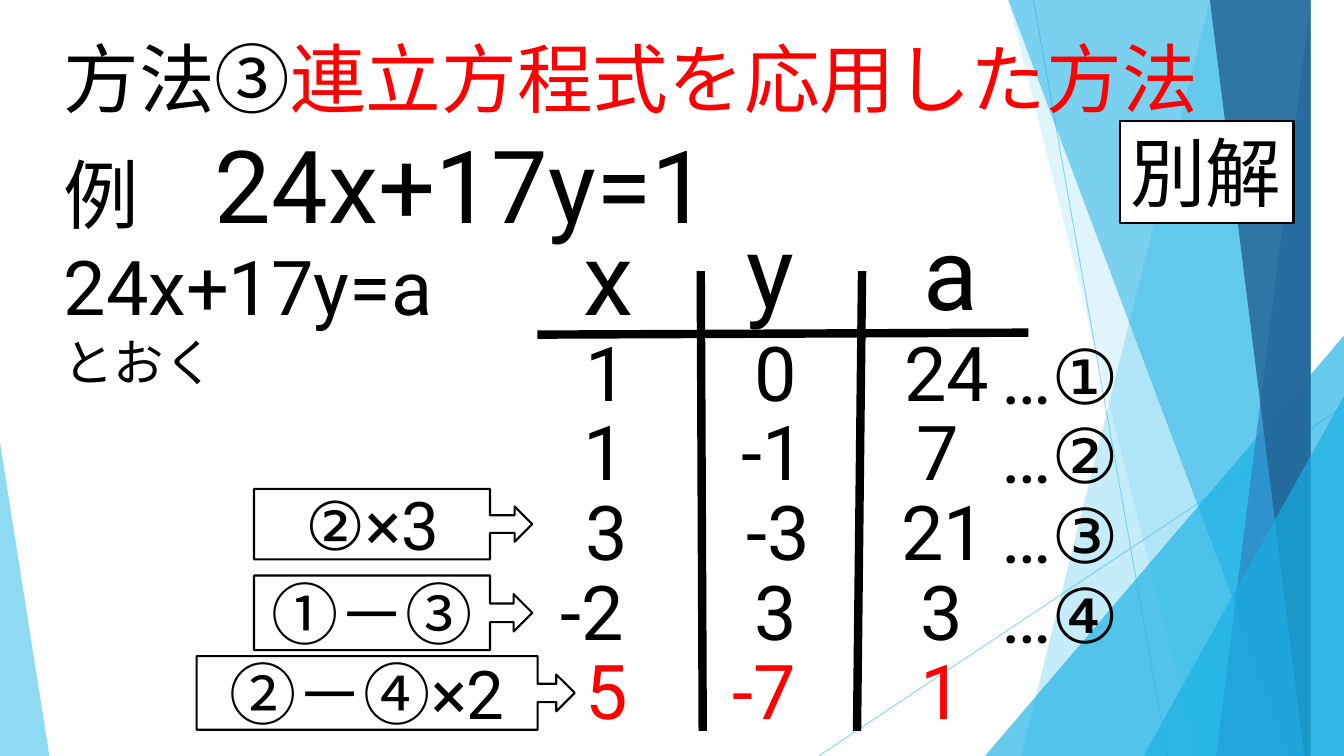
"""Build the slide that solves 24x+17y=1 with a table of equations."""
from pptx import Presentation
from pptx.dml.color import RGBColor
from pptx.enum.shapes import MSO_CONNECTOR, MSO_SHAPE
from pptx.enum.text import MSO_ANCHOR, MSO_AUTO_SIZE, PP_ALIGN
from pptx.oxml.ns import qn
from pptx.util import Inches, Pt
from lxml.etree import SubElement

THEME = {
    "font": "Roboto", "ink": "000000", "red": "FF0000", "paper": "FFFFFF",
    "sky": "5FCBEF", "cyan": "17B0E4", "blue": "2E83C3", "navy": "226292",
    "huge": 72, "big": 54, "mid": 48, "small": 36,
}

TITLE = [
    [("方法③", "big", "ink"), ("連立方程式を応用した方法", "big", "red")],
    [("例\u3000".replace("\u3000", "　"), "big", "ink"), ("24x+17y=1", "huge", "ink")],
]
BODY = [[("24x+17y=a", "big", "ink")], [("とおく", "small", "ink")]]
HEADS = [("x", 5.69, 2.08), ("y", 7.31, 2.01), ("a", 9.06, 2.03)]
ROWS = [
    ([("1", 5.71), ("0", 7.38), ("24", 8.87)], "①", "ink"),
    ([("1", 5.69), ("-1", 7.26), ("7", 8.99)], "②", "ink"),
    ([("3", 5.71), ("-3", 7.31), ("21", 8.84)], "③", "ink"),
    ([("-2", 5.46), ("3", 7.38), ("3", 9.03)], "④", "ink"),
    ([("5", 5.71), ("-7", 7.17), ("1", 9.03)], "", "red"),
]
WIDTHS = (0.89, 0.89, 1.3)
STEPS = [
    ("②×3", (2.52, 4.85, 2.76, 0.7), 0.848),
    ("①－③", (2.52, 5.71, 2.76, 0.74), 0.848),
    ("②－④×2", (1.95, 6.51, 3.75, 0.73), 0.902),
]
RULES = [(5.33, 3.32, 10.2, 3.3), (6.95, 2.69, 6.97, 7.25), (8.55, 2.69, 8.5, 7.25)]
RAYS = [(10.25, 0, 11.58, 7.5), (13.33, 4.03, 8.12, 7.5)]
BANDS = [
    (12.28, 10.04, "sky", 36),
    (10.5, 11.83, "sky", 20),
    ((9.77, 3.33, 3.56, 4.17), 1, "cyan", 66),
    (10.21, 12.91, "cyan", 50),
    (13.03, 11.92, "blue", 70),
    (11.96, 13.18, "navy", 80),
    ((11.34, 3.93, 1.99, 3.57), 1, "cyan", 66),
    ((0, 4.39, 0.49, 3.11), 0, "sky", 70),
]


def tint(name):
    return RGBColor.from_string(THEME[name])


def fade(fill, share):
    node = fill._xPr.find(".//" + qn("a:srgbClr"))
    SubElement(node, qn("a:alpha"), val=str(share * 1000))


def place(shape, box):
    for key, val in zip(("left", "top", "width", "height"), box):
        setattr(shape, key, Inches(val))


def write(shape, lines, **form):
    frame = shape.text_frame
    style = {"word_wrap": True, "auto_size": MSO_AUTO_SIZE.NONE,
             "vertical_anchor": MSO_ANCHOR.TOP}
    align = form.pop("align", PP_ALIGN.LEFT)
    for key, val in {**style, **form}.items():
        setattr(frame, key, val)
    for i, line in enumerate(lines):
        para = frame.add_paragraph() if i else frame.paragraphs[0]
        for key, val in {"alignment": align, "space_before": Pt(0)}.items():
            setattr(para, key, val)
        for text, size, color in line:
            run = para.add_run()
            run.text = text
            run.font.color.rgb = tint(color)
            for key, val in {"name": THEME["font"], "size": Pt(THEME[size])}.items():
                setattr(run.font, key, val)


def label(slide, text, box, size="big", color="ink"):
    write(slide.shapes.add_textbox(*map(Inches, box)), [[(text, size, color)]])


def stroke(slide, ends, color, width, share=100):
    line = slide.shapes.add_connector(MSO_CONNECTOR.STRAIGHT, *map(Inches, ends))
    line.line.color.rgb = tint(color)
    line.line.width = Pt(width)
    if share < 100:
        fade(line.line.fill, share)
    SubElement(line._element.spPr, qn("a:effectLst"))


def panel(slide, kind, box):
    shape = slide.shapes.add_shape(kind, *map(Inches, box))
    shape.shadow.inherit = False
    shape.fill.solid()
    shape.fill.fore_color.rgb = tint("paper")
    shape.line.color.rgb = tint("ink")
    shape.line.width = Pt(1.5)
    return shape


def backdrop(slide):
    for ends in RAYS:
        stroke(slide, ends, "sky", 0.75, 70)
    for head, foot, color, share in BANDS:
        if isinstance(head, tuple):
            shape = panel(slide, MSO_SHAPE.ISOSCELES_TRIANGLE, head)
            shape.adjustments[0] = foot
        else:
            pen = slide.shapes.build_freeform(head, -0.01, scale=Inches(1))
            pen.add_line_segments([(13.33, -0.01), (13.33, 7.5), (foot, 7.5)])
            shape = pen.convert_to_shape()
            shape.shadow.inherit = False
            shape.fill.solid()
        shape.fill.fore_color.rgb = tint(color)
        fade(shape.fill, share)
        shape.line.fill.background()


def heading(slide):
    title, body = slide.placeholders
    parts = [(title, TITLE, (0.53, 0.27, 12.42, 2.22)),
             (body, BODY, (0.53, 2.33, 6.91, 1.62))]
    for shape, lines, box in parts:
        slide.shapes._spTree.append(shape._element)
        place(shape, box)
        write(shape, lines)
    for para in body.text_frame.paragraphs:
        props = para._p.get_or_add_pPr()
        props.set("marL", "0")
        props.set("indent", "0")
        SubElement(props, qn("a:buNone"))


def table(slide):
    for ends in RULES:
        stroke(slide, ends, "ink", 6)
    for text, left, top in HEADS:
        label(slide, text, (left, top, 0.89, 1.31), "huge")
    for i, (cells, mark, color) in enumerate(ROWS):
        top = 3.18 + 0.79 * i
        for (text, left), width in zip(cells, WIDTHS):
            label(slide, text, (left, top, width, 1.01), "big", color)
        if mark:
            label(slide, "…" + mark, (9.83, top + 0.03, 2.88, 1.01))


def callouts(slide):
    for text, box, share in STEPS:
        shape = panel(slide, MSO_SHAPE.RIGHT_ARROW_CALLOUT, box)
        for i, val in enumerate((0.25, 0.25, 0.25, share)):
            shape.adjustments[i] = val
        write(shape, [[(text, "mid", "ink")]], align=PP_ALIGN.CENTER,
              vertical_anchor=MSO_ANCHOR.MIDDLE)
    badge = panel(slide, MSO_SHAPE.RECTANGLE, (11.11, 1.2, 1.72, 1.01))
    write(badge, [[("別解", "big", "ink")]], word_wrap=False)


def main():
    deck = Presentation()
    deck.slide_width, deck.slide_height = Inches(13.33), Inches(7.5)
    slide = deck.slides.add_slide(deck.slide_layouts[1])
    backdrop(slide)
    heading(slide)
    table(slide)
    callouts(slide)
    deck.save("out.pptx")


if __name__ == "__main__":
    main()
